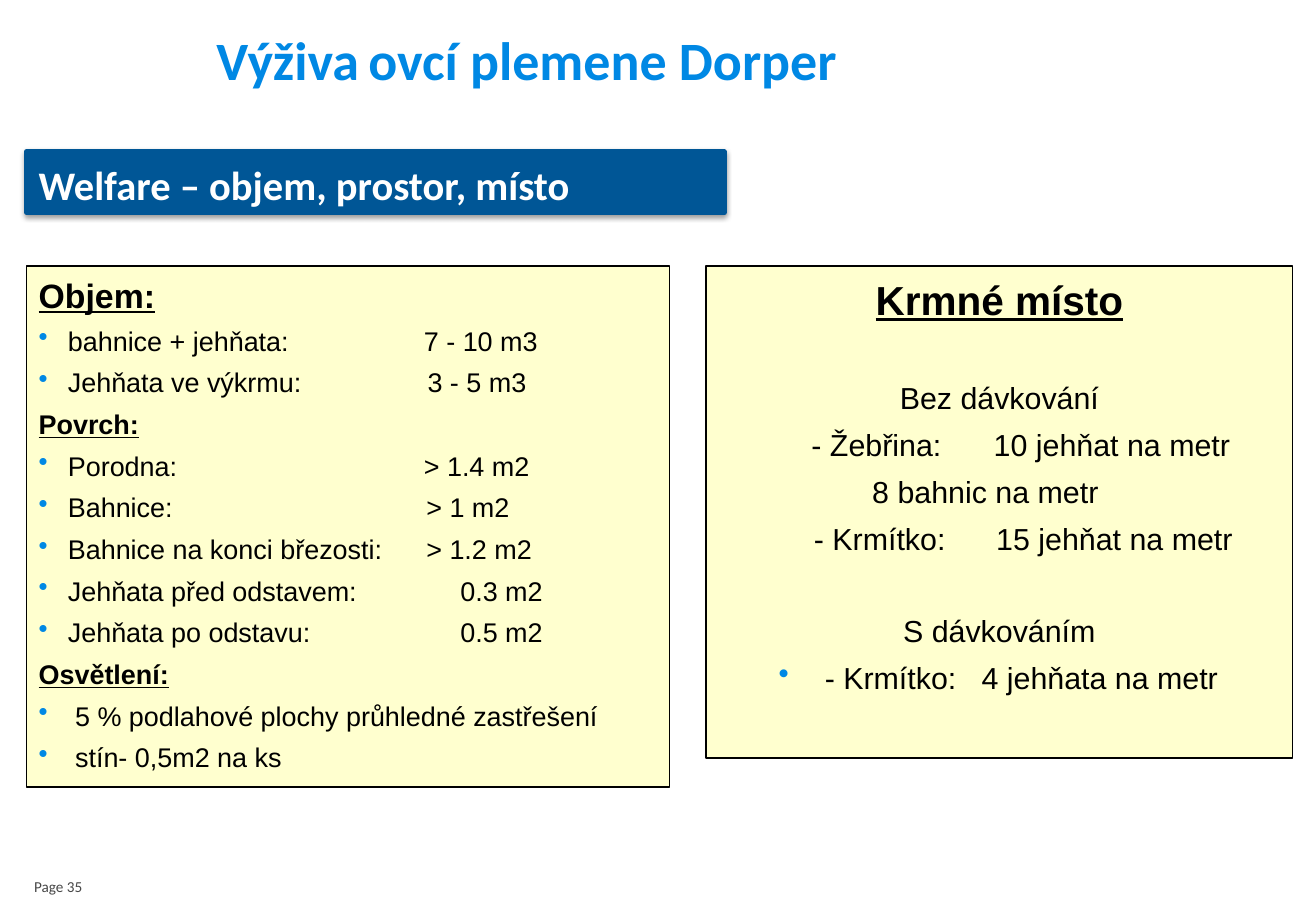
from lxml import etree
from pptx import Presentation
from pptx.dml.color import RGBColor
from pptx.enum import shapes, text
from pptx.oxml import parse_xml
from pptx.util import Inches, Pt

NS = "http://schemas.openxmlformats.org/drawingml/2006/main"
BLUE = "0088E4"


def paint(item, color):
    if hasattr(item, "solid"):
        item.solid()
        item = item.fore_color
    else:
        item = item.color
    item.rgb = RGBColor.from_string(color)


def style(para, font, size, color, bold=False, line=False):
    para.font.name, para.font.size = font, Pt(size)
    para.font.bold, para.font.underline = bold, line
    paint(para.font, color)


prs = Presentation()
prs.slide_width, prs.slide_height = Inches(10.83), Inches(7.5)
slide = prs.slides.add_slide(prs.slide_layouts[5])

# Title
title = slide.shapes.title
title.left, title.top = Inches(1.68), Inches(0.15)
title.width, title.height = Inches(7.64), Inches(0.64)
frame = title.text_frame
frame.auto_size = text.MSO_AUTO_SIZE.NONE
frame.vertical_anchor = text.MSO_ANCHOR.TOP
frame.margin_top = Inches(0.07)
para = frame.paragraphs[0]
para.alignment = text.PP_ALIGN.LEFT
for words, font, size, color, bold in [
    ("Výživa", "Calibri", 32, BLUE, True),
    (" ", "Arial Narrow", 24, "262626", False),
    ("ovcí plemene Dorper", "Calibri", 32, BLUE, True),
]:
    run = para.add_run()
    run.text = words
    style(run, font, size, color, bold)

# Header bar and the two panels
frames = []
for left, top, width, height, fill, edge, weight in [
    (0.22, 1.25, 5.74, 0.5, "005696", "005696", 3),
    (0.22, 2.19, 5.29, 4.29, "FFFFCF", "000000", 0.75),
    (5.81, 2.19, 4.83, 4.05, "FFFFCF", "000000", 0.75),
]:
    box = slide.shapes.add_shape(
        shapes.MSO_SHAPE.RECTANGLE,
        Inches(left), Inches(top), Inches(width), Inches(height))
    box.shadow.inherit = False
    paint(box.fill, fill)
    paint(box.line, edge)
    box.line.width = Pt(weight)
    frame = box.text_frame
    frame.word_wrap = True
    frame.vertical_anchor = text.MSO_ANCHOR.TOP
    frame.margin_top = Inches(0.07)
    frames.append(frame)
    if not frames[1:]:
        bar = box
head, space, feed = frames

# Header text and its soft shadow
para = head.paragraphs[0]
para.text = "Welfare – objem, prostor, místo"
para.alignment = text.PP_ALIGN.LEFT
style(para, "Calibri", 24, "FFFFFF", True)
glow = bar.element.spPr.find(f"{{{NS}}}effectLst")
glow.append(parse_xml(
    f'<a:outerShdw xmlns:a="{NS}" blurRad="39370" dist="20320" dir="5400000" '
    'rotWithShape="0"><a:srgbClr val="000000"><a:alpha val="38000"/>'
    '</a:srgbClr></a:outerShdw>'))

# Panel rows: words, size, heading, centred, bullet, margin, hang, tab, space before
rows = [(space, "Objem:", 20, True, False, False, 0, 0, 0, 0)]
for words, tab in [
    ("bahnice + jehňata:\t7 - 10 m3", 3.17),
    ("Jehňata ve výkrmu:\t3 - 5 m3", 3.2),
    ("Povrch:", 0),
    ("Porodna:\t> 1.4 m2", 3.17),
    ("Bahnice:\t> 1 m2", 3.19),
    ("Bahnice na konci březosti:\t> 1.2 m2", 3.19),
    ("Jehňata před odstavem:\t0.3 m2", 3.47),
    ("Jehňata po odstavu:\t0.5 m2", 3.47),
    ("Osvětlení:", 0),
    ("5 % podlahové plochy průhledné zastřešení", -1),
    ("stín- 0,5m2 na ks", -1),
]:
    item = tab != 0
    margin = 0.3 if tab < 0 else 0.24 if item else 0
    rows.append((space, words, 16, not item, False, item, margin, margin, tab, 5.5))
rows += [
    (feed, "Krmné místo", 24, True, True, False, 0, 0, 0, 0),
    (feed, "Bez dávkování", 18, False, True, False, 0, 0, 0, 33.2),
    (feed, "- Žebřina:\t10 jehňat na metr", 18, False, False, False, 0.77, 0, 2.12, 6.2),
    (feed, "\t8 bahnic na metr", 18, False, False, False, 0.77, 0, 2.18, 6.2),
    (feed, "- Krmítko:\t15 jehňat na metr", 18, False, False, False, 0.79, 0, 2.1, 6.2),
    (feed, "S dávkováním", 18, False, True, False, 0, 0, 0, 33.2),
    (feed, "- Krmítko:\t4 jehňata na metr", 18, False, False, True, 0.88, 0.38, 2.17, 6.2),
]
for frame, words, size, bold, mid, dot, margin, hang, tab, gap in rows:
    para = frame.add_paragraph() if frame.text else frame.paragraphs[0]
    para.text = words
    para.alignment = text.PP_ALIGN.CENTER if mid else text.PP_ALIGN.LEFT
    para.space_before = Pt(gap)
    props = para._p.get_or_add_pPr()
    props.set("marL", str(Inches(margin)))
    props.set("indent", str(-Inches(hang)))
    if dot:
        color = etree.SubElement(props, f"{{{NS}}}buClr")
        etree.SubElement(color, f"{{{NS}}}srgbClr", val=BLUE)
        etree.SubElement(props, f"{{{NS}}}buChar", char="•")
    if tab > 0:
        tabs = etree.SubElement(props, f"{{{NS}}}tabLst")
        etree.SubElement(tabs, f"{{{NS}}}tab", pos=str(Inches(tab)), algn="l")
    style(para, "Arial", size, "000000", bold, bold)

# Page number
page = slide.shapes.add_textbox(Inches(0.14), Inches(7.1), Inches(2.65), Inches(0.33))
frame = page.text_frame
frame.word_wrap = True
frame.vertical_anchor = text.MSO_ANCHOR.BOTTOM
frame.margin_left, frame.margin_bottom = Inches(0.14), Inches(0.06)
para = frame.paragraphs[0]
para.text = "Page 35"
style(para, "Calibri", 9, "474747")

prs.save("out.pptx")
